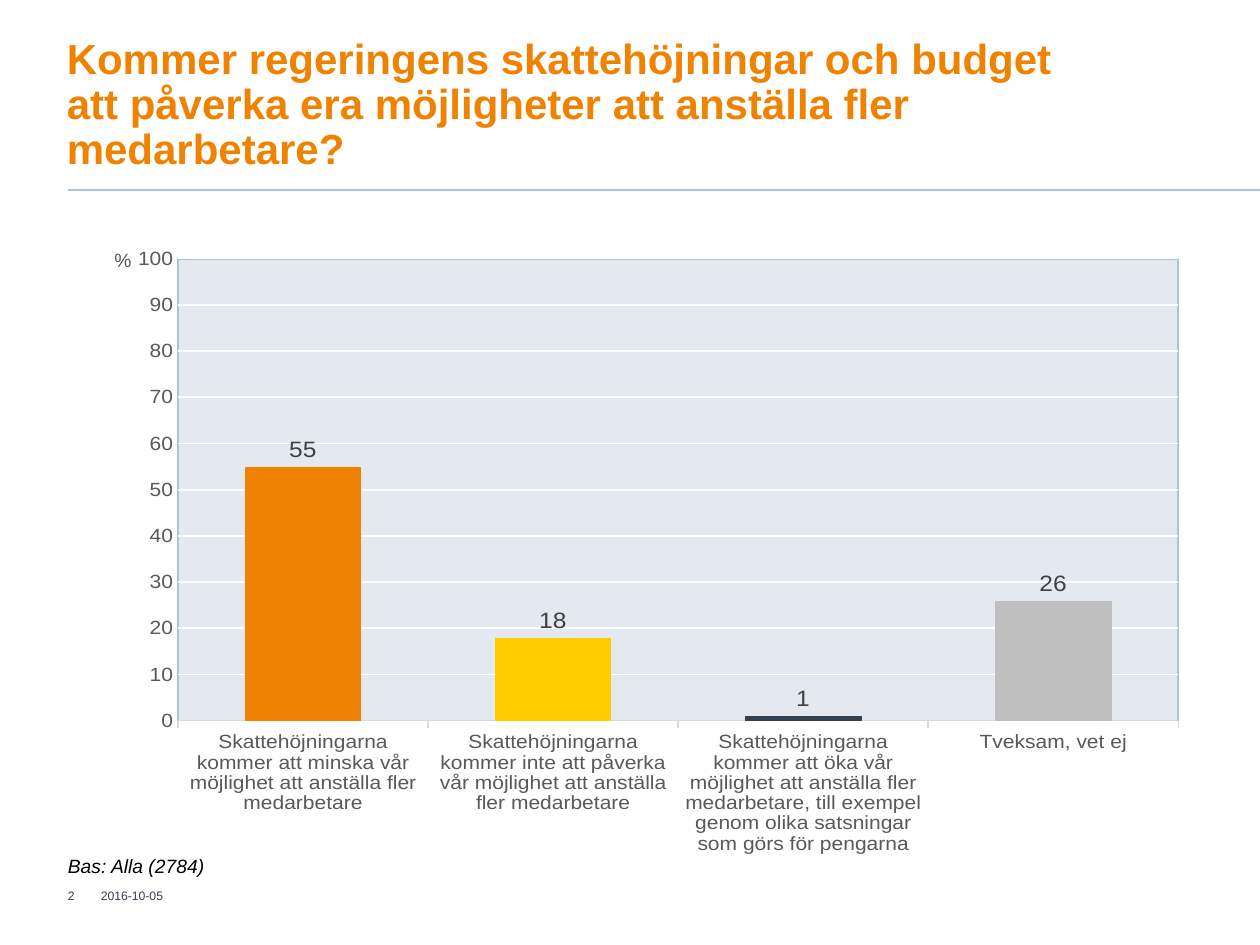
from lxml.etree import SubElement
from pptx import Presentation
from pptx.chart.data import CategoryChartData
from pptx.dml.color import RGBColor
from pptx.enum.chart import XL_CHART_TYPE, XL_LABEL_POSITION, XL_TICK_MARK
from pptx.enum.shapes import MSO_CONNECTOR
from pptx.enum.text import MSO_ANCHOR, PP_ALIGN
from pptx.oxml import parse_xml
from pptx.oxml.ns import nsdecls, qn
from pptx.util import Inches, Pt

FONT = "Arial"
COLORS = {"orange": "EF8200", "yellow": "FFCC00", "navy": "33414E", "silver": "BFBFBF",
          "rule": "AEC1CF", "plot": "E4E9EF", "axis": "D9D9D9", "grid": "FFFFFF",
          "label": "595959", "value": "404040", "black": "000000"}

TITLE = ("Kommer regeringens skattehöjningar och budget att påverka "
         "era möjligheter att anställa fler medarbetare?")
ANSWERS = [
    ("Skattehöjningarna kommer att minska vår möjlighet att anställa fler medarbetare",
     55, "orange"),
    ("Skattehöjningarna kommer inte att påverka vår möjlighet att anställa fler medarbetare",
     18, "yellow"),
    ("Skattehöjningarna kommer att öka vår möjlighet att anställa fler medarbetare, "
     "till exempel genom olika satsningar som görs för pengarna", 1, "navy"),
    ("Tveksam, vet ej", 26, "silver"),
]
# text, box, size, colour, italic, wrap, anchor, left and right inset
NOTES = [
    ("2016-10-05", (0.8, 7.02, 0.6, 0.17), 7, "navy", False, True, MSO_ANCHOR.MIDDLE, 0),
    ("2", (0.44, 7.02, 0.34, 0.17), 7, "navy", False, True, MSO_ANCHOR.MIDDLE, 0.1),
    ("%", (0.81, 1.92, 0.29, 0.29), 11, "label", False, True, MSO_ANCHOR.TOP, 0.1),
    ("Bas: Alla (2784)", (0.44, 6.73, 1.3, 0.29), 11, "black", True, False,
     MSO_ANCHOR.TOP, 0.1),
]
CHART_BOX = (0.61, 1.92, 8.92, 4.86)
PLOT_SHARES = {"x": 0.09, "y": 0.03, "w": 0.89, "h": 0.83}


def rgb(name):
    return RGBColor.from_string(COLORS[name])


def inches(box):
    return [Inches(length) for length in box]


def style(font, size, color, bold=False, italic=False):
    font.name, font.size = FONT, Pt(size)
    font.bold, font.italic = bold, italic
    font.color.rgb = rgb(color)


def set_line(line, color, width):
    line.color.rgb = rgb(color)
    line.width = Pt(width)


def add_title(slide):
    title = slide.shapes.title
    title.left, title.top, title.width, title.height = inches((0.53, 0.88, 8.15, 0.9))
    frame = title.text_frame
    frame.text = TITLE
    frame.word_wrap = True
    frame.vertical_anchor = MSO_ANCHOR.BOTTOM
    frame.margin_left = frame.margin_top = 0
    frame.margin_right, frame.margin_bottom = Inches(0.1), Inches(0.4)
    paragraph = frame.paragraphs[0]
    paragraph.alignment = PP_ALIGN.LEFT
    paragraph.line_spacing = 0.9
    style(paragraph.runs[0].font, 24, "orange", bold=True)


def add_rule(slide):
    rule = slide.shapes.add_connector(MSO_CONNECTOR.STRAIGHT,
                                      *inches((0.54, 1.51, 10, 1.51)))
    set_line(rule.line, "rule", 1)
    SubElement(rule._element.spPr, qn("a:effectLst"))


def format_plot_area(chart):
    """Fix the inner plot position and give it a fill and a border."""
    plot_area = chart._chartSpace.chart.plotArea
    for layout in plot_area.findall(qn("c:layout")):
        plot_area.remove(layout)
    shares = "".join(f'<c:{key} val="{share}"/>' for key, share in PLOT_SHARES.items())
    plot_area.insert(0, parse_xml(
        f'<c:layout {nsdecls("c")}><c:manualLayout><c:layoutTarget val="inner"/>'
        f'<c:xMode val="edge"/><c:yMode val="edge"/>{shares}</c:manualLayout></c:layout>'))
    plot_area.append(parse_xml(
        f'<c:spPr {nsdecls("c", "a")}>'
        f'<a:solidFill><a:srgbClr val="{COLORS["plot"]}"/></a:solidFill>'
        f'<a:ln w="{Pt(1)}"><a:solidFill><a:srgbClr val="{COLORS["rule"]}"/></a:solidFill>'
        '</a:ln></c:spPr>'))


def add_answer_chart(slide):
    data = CategoryChartData()
    data.categories = [answer for answer, _, _ in ANSWERS]
    data.add_series("Series 1", [percent for _, percent, _ in ANSWERS])
    chart = slide.shapes.add_chart(XL_CHART_TYPE.COLUMN_CLUSTERED,
                                   *inches(CHART_BOX), data).chart
    style(chart.font, 10, "orange")
    chart.has_legend = chart.has_title = False

    plot = chart.plots[0]
    plot.gap_width, plot.overlap = 114, -27
    plot.vary_by_categories = False
    series = plot.series[0]
    series.format.fill.solid()
    series.format.fill.fore_color.rgb = rgb("orange")
    for index, (_, _, color) in enumerate(ANSWERS):
        fill = series.points[index].format.fill
        fill.solid()
        fill.fore_color.rgb = rgb(color)
    labels = series.data_labels
    labels.show_value = True
    labels.position = XL_LABEL_POSITION.OUTSIDE_END
    style(labels.font, 14, "value")

    answers, percents = chart.category_axis, chart.value_axis
    for axis in (answers, percents):
        style(axis.tick_labels.font, 12, "label")
        axis.minor_tick_mark = XL_TICK_MARK.NONE
    answers.major_tick_mark = XL_TICK_MARK.OUTSIDE
    set_line(answers.format.line, "axis", 0.75)
    percents.minimum_scale, percents.maximum_scale, percents.major_unit = 0, 100, 10
    percents.major_tick_mark = XL_TICK_MARK.NONE
    percents.format.line.fill.background()
    set_line(percents.major_gridlines.format.line, "grid", 1)
    format_plot_area(chart)


def add_note(slide, text, box, size, color, italic, wrap, anchor, inset):
    frame = slide.shapes.add_textbox(*inches(box)).text_frame
    frame.text = text
    frame.word_wrap = wrap
    frame.vertical_anchor = anchor
    frame.margin_left = frame.margin_right = Inches(inset)
    style(frame.paragraphs[0].runs[0].font, size, color, italic=italic)


def main():
    presentation = Presentation()
    presentation.slide_width, presentation.slide_height = Inches(10), Inches(7.5)
    slide = presentation.slides.add_slide(presentation.slide_layouts[5])
    add_rule(slide)
    add_answer_chart(slide)
    add_title(slide)
    for note in NOTES:
        add_note(slide, *note)
    presentation.save("out.pptx")


if __name__ == "__main__":
    main()
